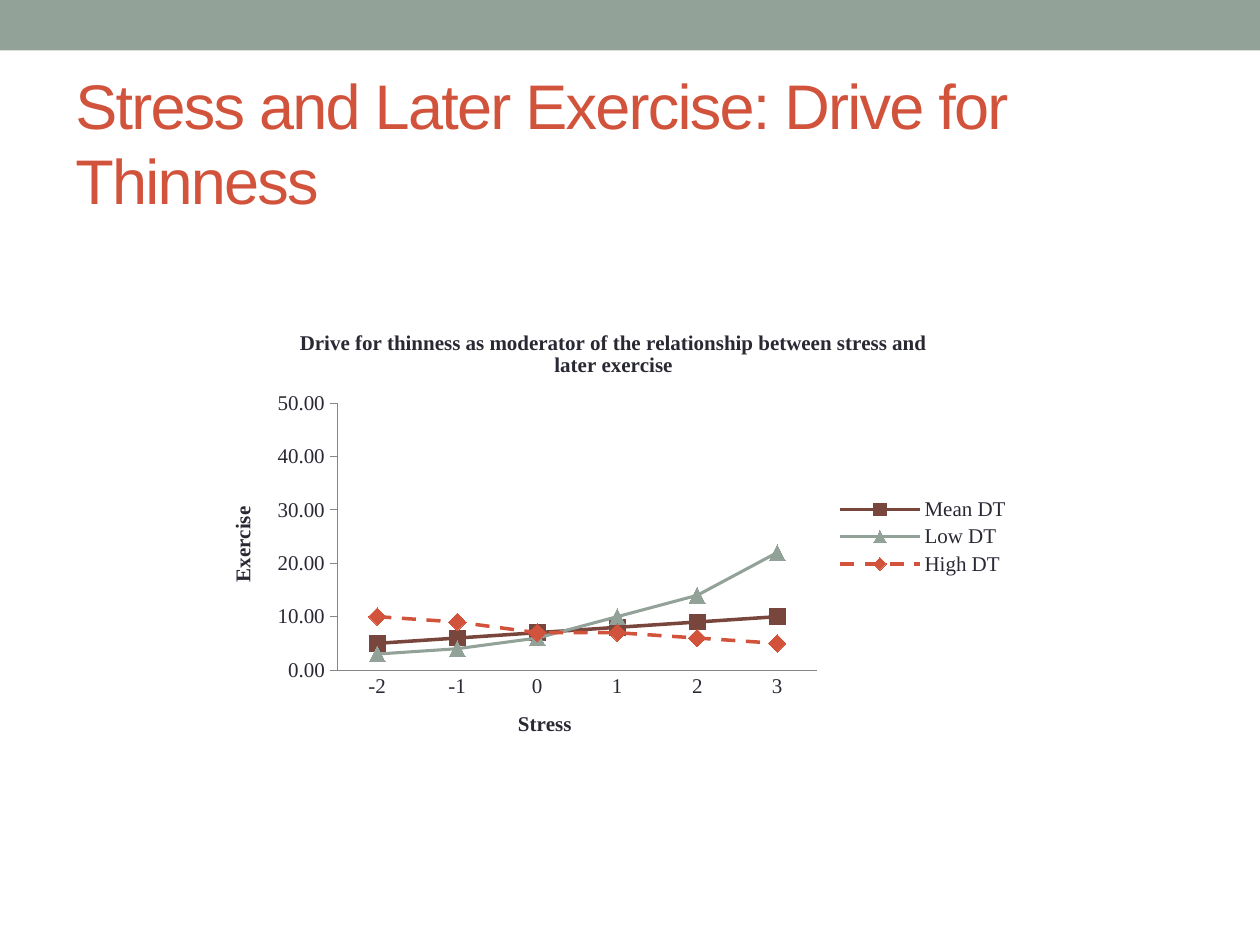
import pptx
import pptx.chart.data
import pptx.dml.color
import pptx.enum.chart
import pptx.enum.dml
import pptx.enum.shapes
import pptx.enum.text
import pptx.oxml
import pptx.oxml.ns
import pptx.util

Pt = pptx.util.Pt
RGBColor = pptx.dml.color.RGBColor
Marker = pptx.enum.chart.XL_MARKER_STYLE
Tick = pptx.enum.chart.XL_TICK_MARK

SAGE = RGBColor(0x93, 0xA2, 0x99)
RUST = RGBColor(0xD2, 0x53, 0x3C)
BROWN = RGBColor(0x79, 0x46, 0x3D)
INK = RGBColor(0x29, 0x29, 0x34)
GREY = RGBColor(0x86, 0x86, 0x86)

CHART_WIDTH, CHART_HEIGHT = 468, 259.2
STRESS_LEVELS = ["-2", "-1", "0", "1", "2", "3"]
SERIES = [
    ("Mean DT", (5, 6, 7, 8, 9, 10), BROWN, 2, Marker.SQUARE, 9, False),
    ("Low DT", (3, 4, 6, 10, 14, 22), SAGE, 1.75, Marker.TRIANGLE, 9, False),
    ("High DT", (10, 9, 7, 7, 6, 5), RUST, 2, Marker.DIAMOND, 10, True),
]


class SlideBuilder:
    """Hold the style and the current slide, and add each kind of element."""

    heading_font = "Arial"
    chart_font = "Times New Roman"
    chart_size = Pt(12)

    def __init__(self, page):
        self.page = page

    def band(self, left, top, width, height, color):
        shape = self.page.shapes.add_shape(
            pptx.enum.shapes.MSO_SHAPE.RECTANGLE, Pt(left), Pt(top), Pt(width), Pt(height))
        shape.shadow.inherit = False
        shape.fill.solid()
        shape.fill.fore_color.rgb = color
        shape.line.fill.background()

    def heading(self, text, left, top, width, height):
        box = self.page.shapes.add_textbox(Pt(left), Pt(top), Pt(width), Pt(height))
        frame = box.text_frame
        frame.word_wrap = True
        frame.vertical_anchor = pptx.enum.text.MSO_ANCHOR.MIDDLE
        span = frame.paragraphs[0].add_run()
        span.text = text
        span.font.name = self.heading_font
        span.font.size = Pt(36)
        span.font.color.rgb = RUST
        span.font._element.set("spc", "-100")

    def style_font(self, font, bold=False):
        font.name = self.chart_font
        font.size = self.chart_size
        font.bold = bold
        font.color.rgb = INK

    def chart_title(self, owner, text):
        para = owner.text_frame.paragraphs[0]
        span = para.add_run()
        span.text = text
        self.style_font(span.font, bold=True)

    def place(self, element, index, left, top, width=None, height=None):
        for old in element.findall(pptx.oxml.ns.qn("c:layout")):
            element.remove(old)
        fractions = {"x": left / CHART_WIDTH, "y": top / CHART_HEIGHT}
        target = ""
        if width:
            target = '<c:layoutTarget val="inner"/>'
            fractions.update(w=width / CHART_WIDTH, h=height / CHART_HEIGHT)
        modes = "".join(f'<c:{name}Mode val="edge"/>' for name in "xy")
        values = "".join(f'<c:{name} val="{value:.4f}"/>' for name, value in fractions.items())
        element.insert(index, pptx.oxml.parse_xml(
            f'<c:layout {pptx.oxml.ns.nsdecls("c")}><c:manualLayout>'
            f'{target}{modes}{values}</c:manualLayout></c:layout>'))

    def axis(self, axis, title, tick, left, top):
        axis.has_major_gridlines = False
        axis.major_tick_mark = tick
        axis.minor_tick_mark = Tick.NONE
        axis.format.line.color.rgb = GREY
        axis.format.line.width = Pt(0.5)
        self.style_font(axis.tick_labels.font)
        self.chart_title(axis.axis_title, title)
        self.place(axis.axis_title._element, 1, left, top)

    def line_chart(self, title, categories, series, left, top):
        data = pptx.chart.data.CategoryChartData(number_format="#,##0.00")
        data.categories = categories
        for name, values, *_ in series:
            data.add_series(name, values)
        chart = self.page.shapes.add_chart(
            pptx.enum.chart.XL_CHART_TYPE.LINE_MARKERS,
            Pt(left), Pt(top), Pt(CHART_WIDTH), Pt(CHART_HEIGHT), data).chart
        self.style_font(chart.font)
        self.chart_title(chart.chart_title, title)
        chart.chart_title.include_in_layout = False
        chart.has_legend = True
        chart.legend.position = pptx.enum.chart.XL_LEGEND_POSITION.RIGHT
        chart.legend.include_in_layout = False
        self.style_font(chart.legend.font)
        plot = chart.plots[0]
        plot.vary_by_categories = False
        for line, (_, _, color, weight, marker, size, dashed) in zip(plot.series, series):
            line.smooth = False
            line.format.line.color.rgb = color
            line.format.line.width = Pt(weight)
            if dashed:
                line.format.line.dash_style = pptx.enum.dml.MSO_LINE.DASH
            line.marker.style = marker
            line.marker.size = size
            line.marker.format.fill.solid()
            line.marker.format.fill.fore_color.rgb = color
            line.marker.format.line.color.rgb = color
        self.axis(chart.category_axis, "Stress ", Tick.NONE, 177.2, 226.7)
        self.axis(chart.value_axis, "Exercise", Tick.OUTSIDE, 12.4, 110.2)
        chart.value_axis.minimum_scale = 0
        chart.value_axis.maximum_scale = 50
        chart.value_axis.major_unit = 10
        chart.value_axis.tick_labels.number_format = "#,##0.00"
        chart.value_axis.tick_labels.number_format_is_linked = False
        self.place(chart._chartSpace.chart.plotArea, 0, 76.1, 53.3, 274.3, 152.6)


def main():
    deck = pptx.Presentation()
    deck.slide_width, deck.slide_height = Pt(720), Pt(540)
    builder = SlideBuilder(deck.slides.add_slide(deck.slide_layouts[6]))
    builder.band(0, 0, 720, 28.8, SAGE)
    builder.heading("Stress and Later Exercise: Drive for Thinness", 36, 42, 648, 78)
    builder.line_chart(
        "Drive for thinness as moderator of the relationship between stress and later exercise",
        STRESS_LEVELS, SERIES, 116.64, 177.12)
    deck.save("out.pptx")


if __name__ == "__main__":
    main()
